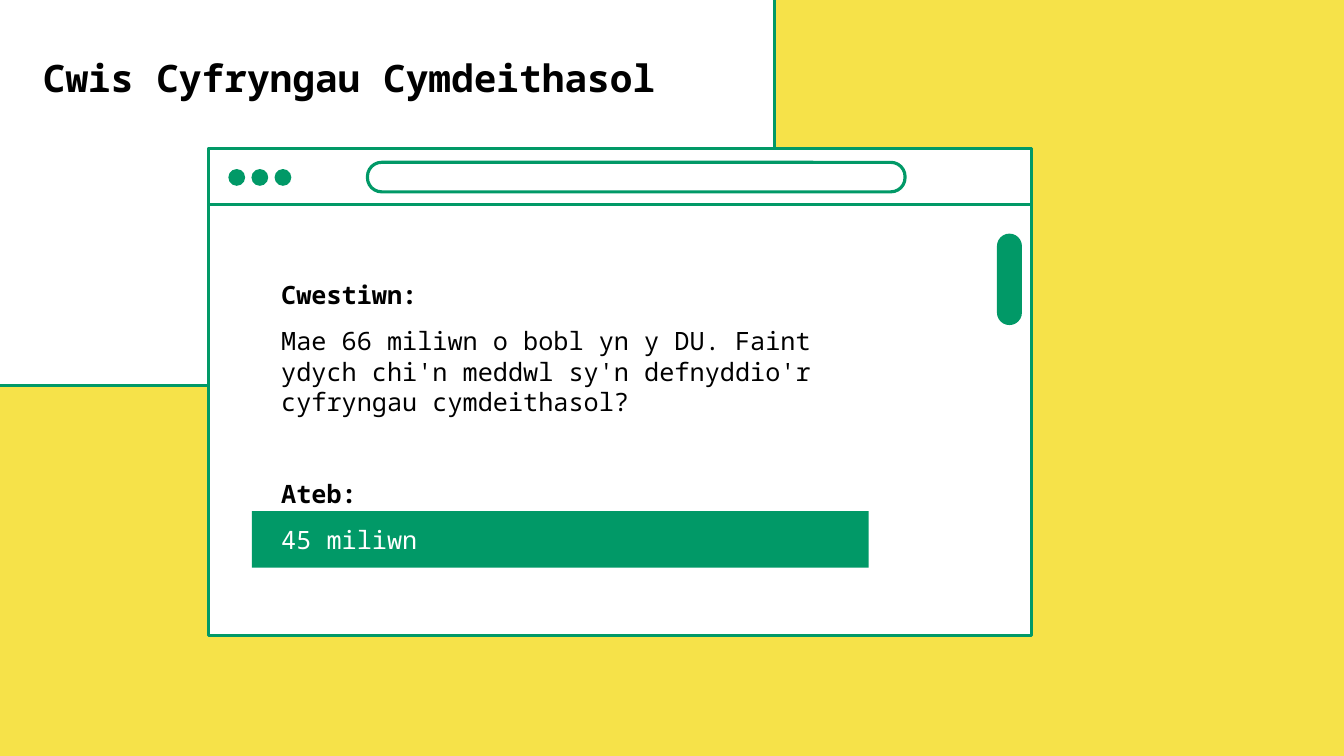
from dataclasses import dataclass
from pptx import Presentation
from pptx.dml.color import RGBColor
from pptx.enum.shapes import MSO_SHAPE
from pptx.enum.text import MSO_ANCHOR, PP_ALIGN
from pptx.util import Pt


@dataclass(frozen=True)
class Theme:
    yellow: str = "F6E249"
    green: str = "019967"
    white: str = "FFFFFF"
    black: str = "000000"
    font: str = "Noto Sans Mono"
    title_size: int = 36
    body_size: int = 24


theme = Theme()
deck = Presentation()
deck.slide_width, deck.slide_height = Pt(1280), Pt(720)
page = deck.slides.add_slide(deck.slide_layouts[6])
page.background.fill.solid()
page.background.fill.fore_color.rgb = RGBColor.from_string(theme.yellow)


def add_panel(kind, left, top, width, height, fill=None, line_width=None, rounding=None):
    shape = page.shapes.add_shape(kind, Pt(left), Pt(top), Pt(width), Pt(height))
    shape.shadow.inherit = False
    if rounding is not None:
        shape.adjustments[0] = rounding
    if fill:
        shape.fill.solid()
        shape.fill.fore_color.rgb = RGBColor.from_string(fill)
    else:
        shape.fill.background()
    if line_width:
        shape.line.color.rgb = RGBColor.from_string(theme.green)
        shape.line.width = Pt(line_width)
    else:
        shape.line.fill.background()


def add_text(text, left, top, width, height, size=theme.body_size, colors=(theme.black,),
             inset_x=9.36, inset_y=5.04, space_after=15):
    box = page.shapes.add_textbox(Pt(left), Pt(top), Pt(width), Pt(height))
    frame = box.text_frame
    frame.word_wrap = True
    frame.vertical_anchor = MSO_ANCHOR.TOP
    frame.margin_left = frame.margin_right = Pt(inset_x)
    frame.margin_top = frame.margin_bottom = Pt(inset_y)
    frame.text = text
    for index, para in enumerate(frame.paragraphs):
        para.alignment = PP_ALIGN.LEFT
        para.space_after = Pt(space_after)
        for span in para.runs:
            span.font.name = theme.font
            span.font.size = Pt(size)
            span.font.bold = index == 0
            span.font.color.rgb = RGBColor.from_string(colors[min(index, len(colors) - 1)])


window_left, window_top, window_width = 198.72, 141.84, 784.08
text_left, text_width = 258.5, 555

add_panel(MSO_SHAPE.RECTANGLE, -46, -18, 784, 385.2, fill=theme.white, line_width=2.75)

for height in (463.7, 53.3):
    add_panel(MSO_SHAPE.RECTANGLE, window_left, window_top, window_width, height,
              fill=theme.white, line_width=3)
add_panel(MSO_SHAPE.ROUNDED_RECTANGLE, 949.5, 222.5, 23.8, 87.1, fill=theme.green, rounding=0.5)
for index in range(3):
    add_panel(MSO_SHAPE.OVAL, 217.5 + 22 * index, 161, 16, 16, fill=theme.green)
add_panel(MSO_SHAPE.ROUNDED_RECTANGLE, 350, 154.6, 512, 28.1, line_width=3, rounding=0.48)

add_text("Cwestiwn:\nMae 66 miliwn o bobl yn y DU. Faint ydych chi'n meddwl sy'n defnyddio'r "
         "cyfryngau cymdeithasol?", text_left, 261.4, text_width, 141.8)
add_text("Cwis Cyfryngau Cymdeithasol", 33.8, 48.2, 621.4, 41.8, size=theme.title_size,
         inset_x=7.2, inset_y=3.6, space_after=0)

add_panel(MSO_SHAPE.RECTANGLE, 239.8, 486.7, 587.5, 54, fill=theme.green)
add_text("Ateb:\n45 miliwn", text_left, 450.7, text_width, 80, colors=(theme.black, theme.white))

deck.save("out.pptx")
